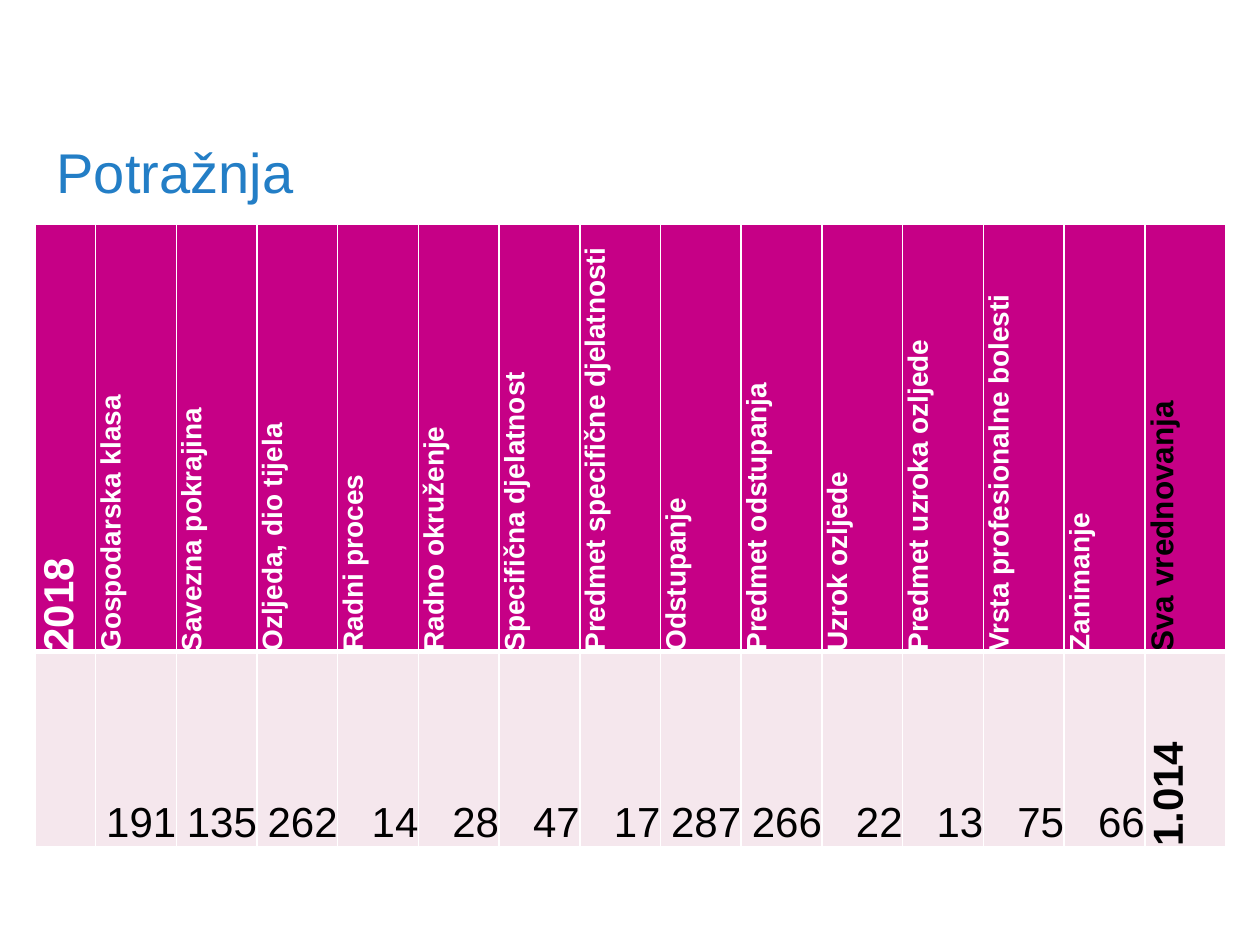
from lxml import etree
from pptx import Presentation
from pptx.dml.color import RGBColor
from pptx.enum import text
from pptx.oxml import ns
from pptx.util import Pt

BLUE = RGBColor(0x23, 0x7E, 0xC6)
MAGENTA = RGBColor(0xC6, 0x00, 0x86)
PINK = RGBColor(0xF5, 0xE7, 0xED)
WHITE = RGBColor(0xFF, 0xFF, 0xFF)
BLACK = RGBColor(0, 0, 0)

CATEGORIES = [
    ("Gospodarska klasa", "191"),
    ("Savezna pokrajina", "135"),
    ("Ozljeda, dio tijela", "262"),
    ("Radni proces", "14"),
    ("Radno okruženje", "28"),
    ("Specifična djelatnost", "47"),
    ("Predmet specifične djelatnosti", "17"),
    ("Odstupanje", "287"),
    ("Predmet odstupanja", "266"),
    ("Uzrok ozljede", "22"),
    ("Predmet uzroka ozljede", "13"),
    ("Vrsta profesionalne bolesti", "75"),
    ("Zanimanje", "66"),
]
YEAR = {"size": Pt(24), "bold": True, "color": WHITE}
HEADING = {"size": Pt(16), "bold": True, "color": WHITE}
TOTAL_HEADING = {"size": Pt(18), "bold": True, "color": BLACK}
COUNT = {"size": Pt(24), "bold": False, "color": BLACK}
TOTAL = {"size": Pt(24), "bold": True, "color": BLACK}


def format_font(font, size, bold, color):
    """Apply typeface, size, weight and colour to a font."""
    for name, value in {"name": "Arial", "size": size, "bold": bold}.items():
        setattr(font, name, value)
    font.color.rgb = color


def add_title(page, words):
    """Fill and place the title placeholder."""
    box = page.shapes.title
    place = {"left": Pt(25.2), "top": Pt(77), "width": Pt(419.8), "height": Pt(41.8)}
    for name, value in place.items():
        setattr(box, name, value)
    frame = box.text_frame
    frame.vertical_anchor = text.MSO_ANCHOR.MIDDLE
    frame.word_wrap = True
    frame.auto_size = text.MSO_AUTO_SIZE.NONE
    para = frame.paragraphs[0]
    para.alignment = text.PP_ALIGN.LEFT
    span = para.add_run()
    span.text = words
    format_font(span.font, Pt(32), False, BLUE)


def set_borders(cell, widths):
    """Draw white borders on the named sides of a cell."""
    properties = cell._tc.get_or_add_tcPr()
    for side, width in widths.items():
        line = etree.SubElement(properties, ns.qn(f"a:ln{side}"), w=str(Pt(width)))
        fill = etree.SubElement(line, ns.qn("a:solidFill"))
        etree.SubElement(fill, ns.qn("a:srgbClr"), val=str(WHITE))


def fill_cell(cell, words, look, color, borders, upright):
    """Write one cell with its fill, borders and text direction."""
    set_borders(cell, borders)
    cell.fill.solid()
    cell.fill.fore_color.rgb = color
    for side in ("left", "top", "right", "bottom"):
        setattr(cell, f"margin_{side}", 0)
    cell.vertical_anchor = text.MSO_ANCHOR.BOTTOM
    para = cell.text_frame.paragraphs[0]
    if upright:
        para.alignment = text.PP_ALIGN.RIGHT
    else:
        cell._tc.get_or_add_tcPr().set("vert", "vert270")
    if words:
        span = para.add_run()
        span.text = words
        format_font(span.font, **look)


def add_demand_table(page):
    """Add the table of evaluations by category."""
    columns = [("2018", YEAR, "", COUNT)]
    columns += [(name, HEADING, count, COUNT) for name, count in CATEGORIES]
    columns.append(("Sva vrednovanja", TOTAL_HEADING, "1.014", TOTAL))
    frame = page.shapes.add_table(
        2, len(columns), Pt(20.2), Pt(128.2), Pt(680.4), Pt(355.7))
    table = frame.table
    for row, height in zip(table.rows, (244.1, 111.6)):
        row.height = Pt(height)
    header_borders = {"L": 1, "R": 1, "T": 1, "B": 3}
    count_borders = {"L": 1, "R": 1, "T": 3, "B": 1}
    for index, (heading, heading_look, count, count_look) in enumerate(columns):
        table.columns[index].width = Pt(46.14 if index else 34.4)
        fill_cell(table.cell(0, index), heading, heading_look, MAGENTA,
                  header_borders, False)
        fill_cell(table.cell(1, index), count, count_look, PINK,
                  count_borders, count_look is COUNT)


def main():
    """Build and save the slide."""
    deck = Presentation()
    deck.slide_width, deck.slide_height = Pt(720), Pt(540)
    page = deck.slides.add_slide(deck.slide_layouts[5])
    add_title(page, "Potražnja")
    add_demand_table(page)
    deck.save("out.pptx")


if __name__ == "__main__":
    main()
